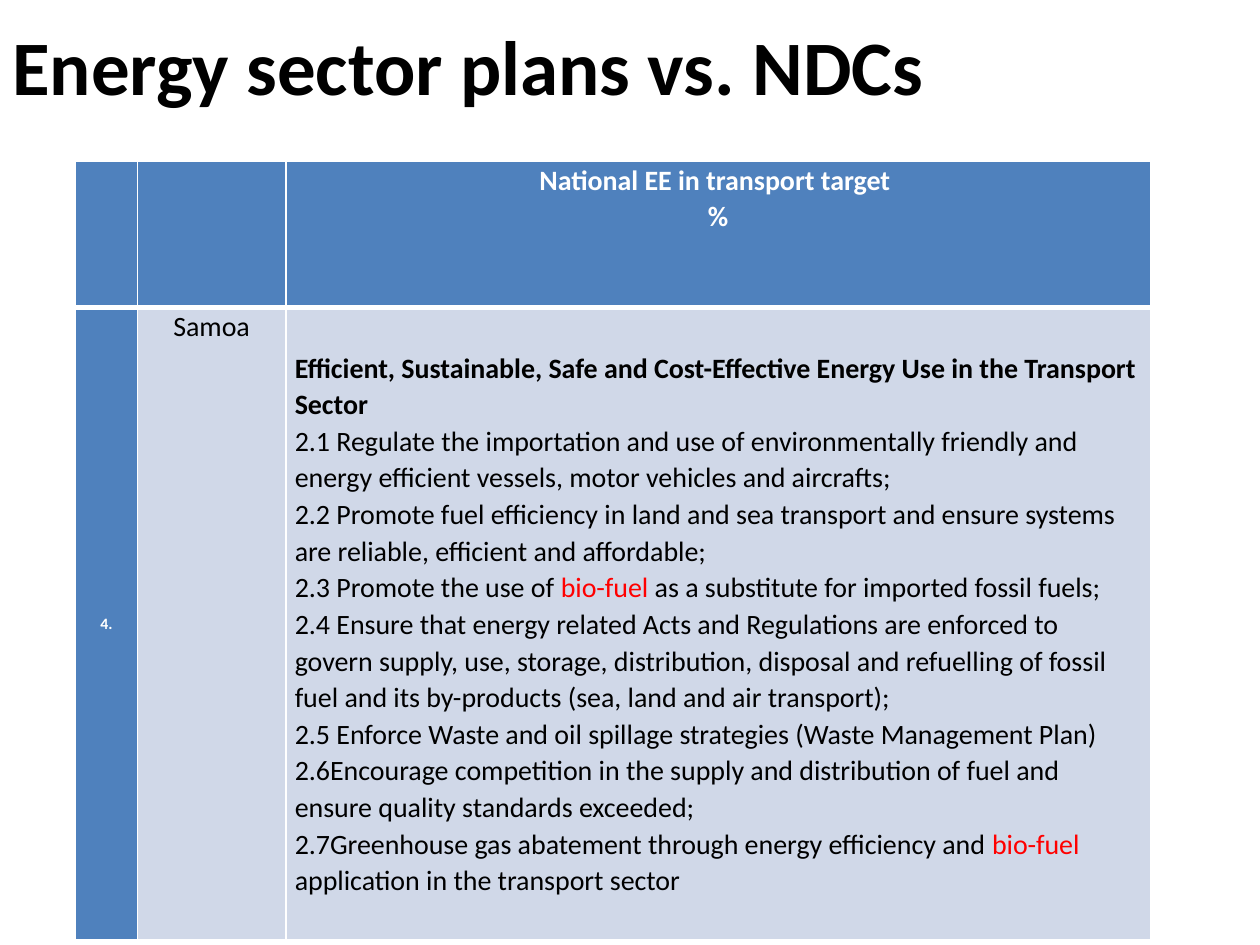
from lxml import etree
from pptx import Presentation
from pptx.dml.color import RGBColor
from pptx.enum import text
from pptx.oxml import ns
from pptx.util import Inches, Pt

BLACK = RGBColor(0x00, 0x00, 0x00)
WHITE = RGBColor(0xFF, 0xFF, 0xFF)
RED = RGBColor(0xFF, 0x00, 0x00)
BLUE = RGBColor(0x4F, 0x81, 0xBD)
PALE_BLUE = RGBColor(0xD0, 0xD8, 0xE8)
FONT = "Calibri"
KEYWORD = "bio-fuel"

TITLE = "Energy sector plans vs. NDCs"
TARGET_HEADING = ["National EE in transport target ", "%"]
MEASURES_HEADING = "Efficient, Sustainable, Safe and Cost-Effective Energy Use in the Transport Sector"
MEASURES = [
    "2.1 Regulate the importation and use of environmentally friendly and energy efficient vessels, motor vehicles and aircrafts;",
    "2.2 Promote fuel efficiency in land and sea transport and ensure systems are reliable, efficient and affordable;",
    "2.3 Promote the use of bio-fuel as a substitute for imported fossil fuels;",
    "2.4 Ensure that energy related Acts and Regulations are enforced to govern supply, use, storage, distribution, disposal and refuelling of fossil fuel and its by-products (sea, land and air transport);",
    "2.5 Enforce Waste and oil spillage strategies (Waste Management Plan)",
    "2.6Encourage competition in the supply and distribution of fuel and ensure quality standards exceeded;",
    "2.7Greenhouse gas abatement through energy efficiency and bio-fuel application in the transport sector",
]
COLUMN_WIDTHS = [0.49, 1.18, 6.86]
ROW_HEIGHTS = [1.16, 5.02]


def add_run(paragraph, words, size, color, bold):
    """Append one formatted run to a paragraph."""
    run = paragraph.add_run()
    run.text = words
    run.font.name = FONT
    run.font.size = Pt(size)
    run.font.bold = bold
    run.font.color.rgb = color


def add_title(slide, left, top, width, height):
    """Place the slide title in the given box."""
    frame = slide.shapes.add_textbox(left, top, width, height).text_frame
    frame.word_wrap = True
    frame.margin_top = Inches(0.09)
    frame.vertical_anchor = text.MSO_ANCHOR.TOP
    add_run(frame.paragraphs[0], TITLE, 44, BLACK, True)


def set_borders(cell, widths):
    """Draw white cell borders with widths in points by side."""
    properties = cell._tc.get_or_add_tcPr()
    for index, (side, width) in enumerate(widths.items()):
        line = etree.Element(ns.qn(f"a:ln{side}"), w=str(Pt(width)))
        fill = etree.SubElement(line, ns.qn("a:solidFill"))
        etree.SubElement(fill, ns.qn("a:srgbClr"), val=str(WHITE))
        properties.insert(index, line)


def style_cell(cell, fill, row):
    """Set the fill, margins and borders of a cell."""
    cell.fill.solid()
    cell.fill.fore_color.rgb = fill
    cell.margin_left = cell.margin_right = Inches(0.07)
    cell.margin_top = cell.margin_bottom = 0
    top, bottom = (1, 3) if row == 0 else (3, 1)
    set_borders(cell, {"L": 1, "R": 1, "T": top, "B": bottom})


def write_cell(cell, lines, size=16, color=BLACK, bold=False,
               align=text.PP_ALIGN.CENTER, anchor=text.MSO_ANCHOR.TOP):
    """Write one paragraph per line, with the keyword in red."""
    cell.vertical_anchor = anchor
    frame = cell.text_frame
    for index, line in enumerate(lines):
        paragraph = frame.add_paragraph() if index else frame.paragraphs[0]
        paragraph.alignment = align
        paragraph.line_spacing = 1.07
        before, keyword, after = line.partition(KEYWORD)
        for words, run_color in ((before, color), (keyword, RED), (after, color)):
            if words:
                is_heading = line == MEASURES_HEADING
                add_run(paragraph, words, size, run_color, bold or is_heading)


def add_plan_table(slide, left, top, width, height):
    """Place the table of national transport targets in the given box."""
    table = slide.shapes.add_table(
        len(ROW_HEIGHTS), len(COLUMN_WIDTHS), left, top, width, height).table
    for column, column_width in zip(table.columns, COLUMN_WIDTHS):
        column.width = Inches(column_width)
    for row, row_height in zip(table.rows, ROW_HEIGHTS):
        row.height = Inches(row_height)
    for row in range(len(ROW_HEIGHTS)):
        for column in range(len(COLUMN_WIDTHS)):
            fill = BLUE if row == 0 or column == 0 else PALE_BLUE
            style_cell(table.cell(row, column), fill, row)
    middle = text.MSO_ANCHOR.MIDDLE
    write_cell(table.cell(0, 2), TARGET_HEADING, color=WHITE, bold=True)
    write_cell(table.cell(1, 0), ["4."], size=9, color=WHITE, bold=True, anchor=middle)
    write_cell(table.cell(1, 1), ["Samoa"])
    write_cell(table.cell(1, 2), [MEASURES_HEADING] + MEASURES,
               align=text.PP_ALIGN.LEFT, anchor=middle)


def main():
    """Build and save the presentation."""
    presentation = Presentation()
    presentation.slide_width = Inches(10)
    presentation.slide_height = Inches(7.5)
    slide = presentation.slides.add_slide(presentation.slide_layouts[6])
    add_title(slide, 0, Inches(0.06), Inches(9), Inches(1.25))
    add_plan_table(slide, Inches(0.6), Inches(1.28), Inches(8.53), Inches(6.18))
    presentation.save("out.pptx")


if __name__ == "__main__":
    main()
